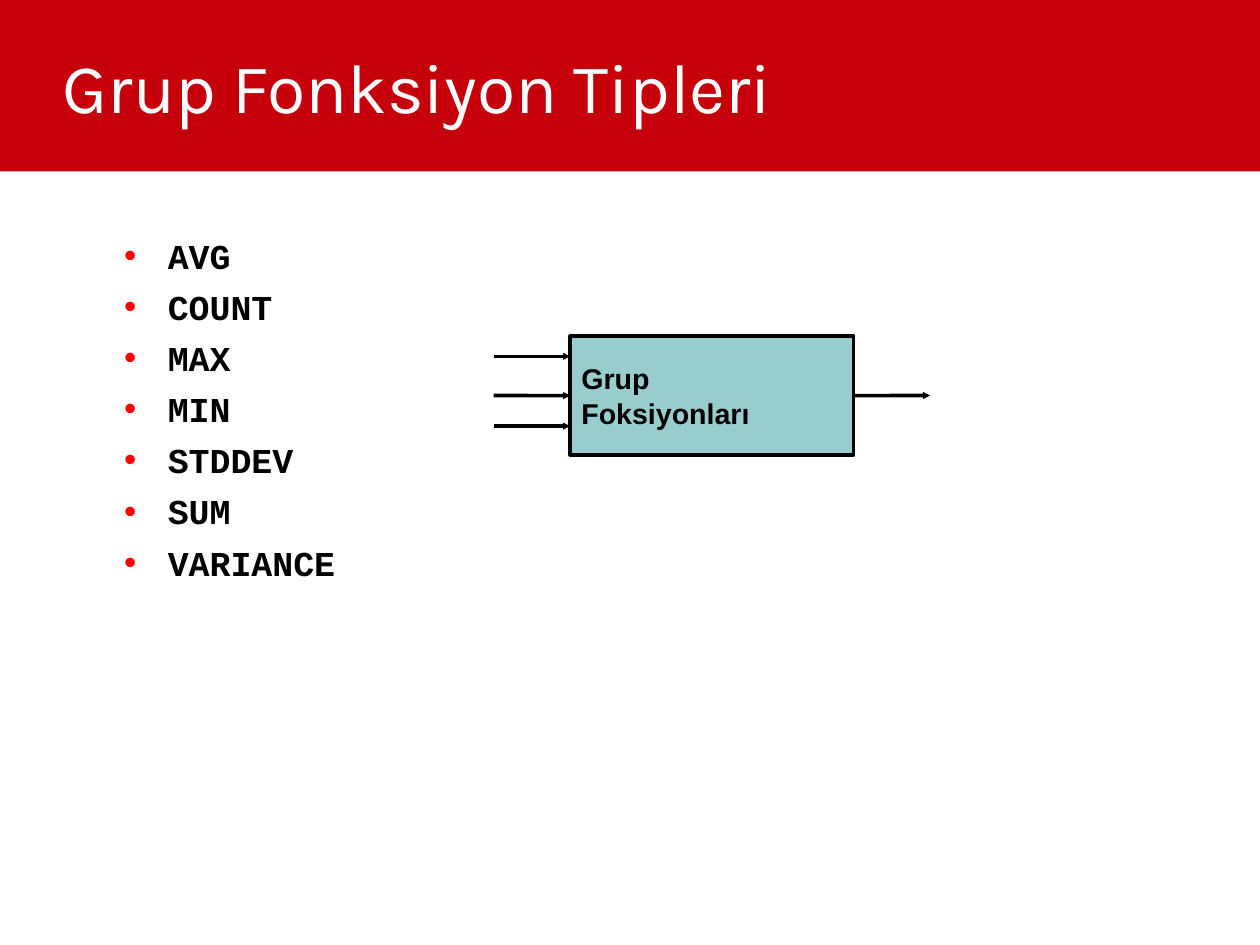
from dataclasses import dataclass

from lxml import etree
from pptx import Presentation
from pptx import util as u
from pptx.dml.color import RGBColor
from pptx.enum import shapes, text
from pptx.oxml.ns import qn


@dataclass(frozen=True)
class Theme:
    band: str = "C5000B"
    title: str = "FFFFFF"
    ink: str = "000000"
    bullet: str = "FF0000"
    block: str = "99CCCC"
    title_font: str = "Karla"
    code_font: str = "Courier New"
    label_font: str = "Arial"
    title_size: float = 44
    code_size: float = 22
    label_size: float = 18
    line_width: float = 2.25


class SlideBuilder:
    def __init__(self, deck, theme):
        self.theme = theme
        self.page = deck.slides.add_slide(deck.slide_layouts[5])

    def add_span(self, para, words, font, size, color, bold=False):
        para.alignment = text.PP_ALIGN.LEFT
        span = para.add_run()
        span.text = words
        span.font.name = font
        span.font.size = u.Pt(size)
        span.font.bold = bold
        span.font.color.rgb = RGBColor.from_string(color)

    def paragraphs(self, frame, lines):
        for index, words in enumerate(lines):
            yield index, frame.add_paragraph() if index else frame.paragraphs[0], words

    def set_frame(self, frame, anchor, side, top):
        frame.word_wrap = True
        frame.auto_size = text.MSO_AUTO_SIZE.NONE
        frame.vertical_anchor = anchor
        frame.margin_left = frame.margin_right = u.Cm(side)
        frame.margin_top = frame.margin_bottom = u.Cm(top)

    def rectangle(self, left, top, width, height, fill):
        box = self.page.shapes.add_shape(
            shapes.MSO_SHAPE.RECTANGLE, u.Cm(left), u.Cm(top), u.Cm(width), u.Cm(height))
        box.shadow.inherit = False
        box.fill.solid()
        box.fill.fore_color.rgb = RGBColor.from_string(fill)
        box.line.fill.background()
        return box

    def band(self, width, height):
        box = self.rectangle(0, 0, width, height, self.theme.band)
        self.page.shapes.title._element.addprevious(box._element)

    def title(self, words, left, top, width, height):
        box = self.page.shapes.title
        box.left, box.top, box.width, box.height = map(u.Cm, (left, top, width, height))
        self.set_frame(box.text_frame, text.MSO_ANCHOR.MIDDLE, 0, 0)
        self.add_span(box.text_frame.paragraphs[0], words, self.theme.title_font,
                      self.theme.title_size, self.theme.title)

    def bullets(self, lines, left, top, width, height):
        box = self.page.shapes.add_textbox(u.Cm(left), u.Cm(top), u.Cm(width), u.Cm(height))
        self.set_frame(box.text_frame, text.MSO_ANCHOR.TOP, 0.03, 0.03)
        for index, para, words in self.paragraphs(box.text_frame, lines):
            props = para._p.get_or_add_pPr()
            props.set("marL", str(u.Cm(1.3)))
            props.set("indent", str(u.Cm(-0.97)))
            color = etree.SubElement(props, qn("a:buClr"))
            etree.SubElement(color, qn("a:srgbClr"), val=self.theme.bullet)
            etree.SubElement(props, qn("a:buFont"), typeface=self.theme.label_font)
            etree.SubElement(props, qn("a:buChar"), char="•")
            para.level = 1
            if index:
                para.space_before = u.Pt(5.8)
            self.add_span(para, words, self.theme.code_font, self.theme.code_size,
                          self.theme.ink, bold=True)

    def block(self, lines, left, top, width, height):
        box = self.rectangle(left, top, width, height, self.theme.block)
        box.line.color.rgb = RGBColor.from_string(self.theme.ink)
        box.line.width = u.Pt(self.theme.line_width)
        self.set_frame(box.text_frame, text.MSO_ANCHOR.MIDDLE, 0.25, 0.13)
        for _, para, words in self.paragraphs(box.text_frame, lines):
            self.add_span(para, words, self.theme.label_font, self.theme.label_size,
                          self.theme.ink, bold=True)
        return box

    def arrow(self, start, end, y):
        line = self.page.shapes.add_connector(
            shapes.MSO_CONNECTOR.STRAIGHT, u.Cm(start), u.Cm(y), u.Cm(end), u.Cm(y))
        line.line.color.rgb = RGBColor.from_string(self.theme.ink)
        line.line.width = u.Pt(self.theme.line_width)
        props = line._element.spPr
        etree.SubElement(props.find(qn("a:ln")), qn("a:tailEnd"),
                         type="triangle", w="sm", len="sm")
        etree.SubElement(props, qn("a:effectLst"))
        return line


def main():
    deck = Presentation()
    deck.slide_width, deck.slide_height = u.Cm(28), u.Cm(21)
    slide = SlideBuilder(deck, Theme())

    slide.band(28, 3.81)
    slide.title("Grup Fonksiyon Tipleri", 1.4, 0.15, 26.6, 3.5)
    slide.bullets(["AVG", "COUNT", "MAX", "MIN", "STDDEV", "SUM", "VARIANCE"],
                  2.4, 5.18, 20.47, 7.57)

    left, top, width, height = 12.67, 7.47, 6.3, 2.64
    right, middle, reach = left + width, top + height / 2, 1.7
    functions = slide.block(["Grup", "Foksiyonları"], left, top, width, height)
    slide.arrow(left - reach, left, middle).end_connect(functions, 1)
    slide.arrow(right, right + reach, middle).begin_connect(functions, 3)
    for y in (7.92, 9.47):
        slide.arrow(left - reach, left, y)

    deck.save("out.pptx")


if __name__ == "__main__":
    main()
